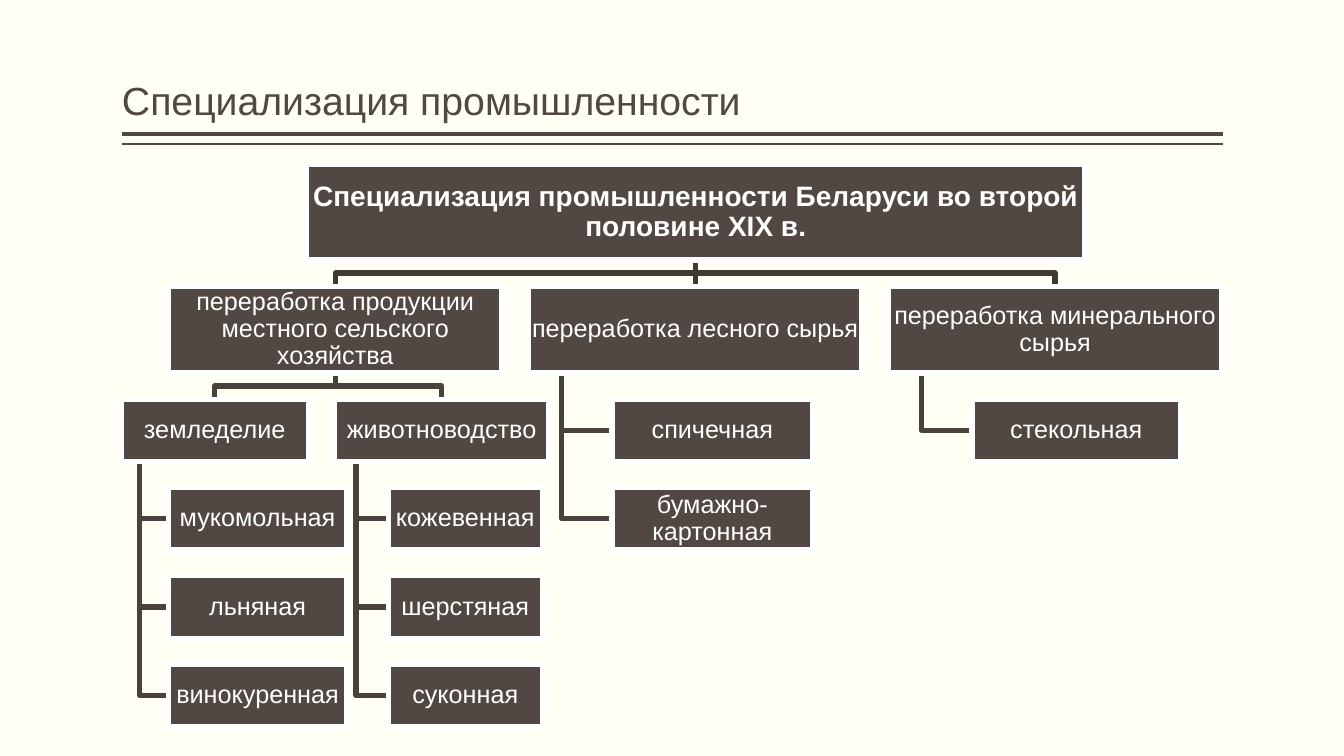
from pptx import Presentation
from pptx.dml.color import RGBColor as RGB
from pptx.enum.shapes import MSO_CONNECTOR as Link, MSO_SHAPE as Kind
from pptx.enum.text import MSO_ANCHOR as Anchor, PP_ALIGN as Align
from pptx.oxml import parse_xml
from pptx.oxml.ns import qn
from pptx.util import Inches, Pt

# Content: a node is (text, column, row, children)
TITLE = "Специализация промышленности"
FARM = ("переработка продукции местного сельского хозяйства", "farm", 1, [
    ("земледелие", "crops", 2, [
        ("мукомольная", "crop goods", 3, []),
        ("льняная", "crop goods", 4, []),
        ("винокуренная", "crop goods", 5, []),
    ]),
    ("животноводство", "herds", 2, [
        ("кожевенная", "herd goods", 3, []),
        ("шерстяная", "herd goods", 4, []),
        ("суконная", "herd goods", 5, []),
    ]),
])
WOOD = ("переработка лесного сырья", "wood", 1, [
    ("спичечная", "wood goods", 2, []),
    ("бумажно-картонная", "wood goods", 3, []),
])
STONE = ("переработка минерального сырья", "stone", 1, [
    ("стекольная", "stone goods", 2, []),
])
ROOT = ("Специализация промышленности Беларуси во второй половине XIX в.",
        "root", 0, [FARM, WOOD, STONE])

# Theme
THEME = dict(
    font="Arial", back="FFFFF3", dark="514843", light="FFFFFF",
    trunk="403934", twig="49413C", edge=3.78,
    title=28, root=20, node=18, lead=0.9,
)

# Grid in inches: columns are (left, width), rows are (top, height)
WIDE, HIGH = 13.33, 7.5
LEFT, SPAN = 1.21, 10.92
BRANCH, STEP = 3.31, 3.57
COLS = {
    "root": (3.04, 7.72),
    **{name: (1.67 + STEP * i, BRANCH)
       for i, name in enumerate(("farm", "wood", "stone"))},
    "crops": (1.2, 1.86), "crop goods": (1.67, 1.77),
    "herds": (3.32, 2.12), "herd goods": (3.85, 1.53),
    "wood goods": (6.07, 1.99), "stone goods": (9.64, 2.07),
}
ROWS = [(1.63, 0.95), (2.84, 0.86)]
ROWS += [(3.96 + 0.876 * i, 0.62) for i in range(4)]
RULES = [(1.33, 3), (1.43, 1)]
HANG = 0.1  # share of a parent's width where its side line drops

SHADE = (
    '<a:effectLst xmlns:a="http://schemas.openxmlformats.org/drawingml/2006/main">'
    '<a:outerShdw blurRad="38100" dist="38100" dir="2700000" algn="tl">'
    '<a:srgbClr val="000000"><a:alpha val="43000"/></a:srgbClr>'
    '</a:outerShdw></a:effectLst>')


def color(name):
    return RGB.from_string(THEME[name])


def write(frame, text, size, tint, align, anchor, pads, bold=False):
    frame.text = text
    frame.word_wrap = True
    frame.vertical_anchor = anchor
    frame.margin_left = frame.margin_right = Inches(pads[0])
    frame.margin_top = frame.margin_bottom = Inches(pads[1])
    para = frame.paragraphs[0]
    para.alignment, para.line_spacing = align, THEME["lead"]
    run = para.runs[0]
    font = run.font
    font.name, font.size, font.bold = THEME["font"], Pt(THEME[size]), bold
    font.color.rgb = color(tint)
    fill = font._element.find(qn("a:solidFill"))
    fill.addnext(parse_xml(SHADE))


def stroke(line, tint, width):
    line.color.rgb = color(tint)
    line.width = Pt(width)


def rule(slide, start, end, tint, width):
    line = slide.shapes.add_connector(
        Link.STRAIGHT, *(Inches(v) for v in (*start, *end)))
    stroke(line.line, tint, width)
    line._element.spPr.append(line._element.makeelement(qn("a:effectLst"), {}))


def bent(slide, points, tint):
    spots = [(Inches(x), Inches(y)) for x, y in points]
    pen = slide.shapes.build_freeform(*spots[0])
    pen.add_line_segments(spots[1:], close=False)
    shape = pen.convert_to_shape()
    shape.shadow.inherit = False
    shape.fill.background()
    stroke(shape.line, tint, THEME["edge"])


def place(node):
    return (*COLS[node[1]], *ROWS[node[2]])


def join(slide, node):
    """Fork down to children that branch again, else hang them at the side."""
    left, width, top, height = place(node)
    base, mid = top + height, left + width / 2
    tint = "twig" if node[2] else "trunk"
    fork = any(kid[3] for kid in node[3])
    for kid in node[3]:
        x, w, y, h = place(kid)
        goal, half = x + w / 2, (base + y) / 2
        if not fork:
            drop, turn = left + width * HANG, y + h / 2
            bent(slide, [(drop, base), (drop, turn), (x, turn)], tint)
        elif abs(goal - mid) < 0.02:
            rule(slide, (mid, base), (mid, y), tint, THEME["edge"])
        else:
            bent(slide, [(mid, base), (mid, half), (goal, half), (goal, y)], tint)
        join(slide, kid)


def draw(slide, node):
    left, width, top, height = place(node)
    box = slide.shapes.add_shape(
        Kind.RECTANGLE, *(Inches(v) for v in (left, top, width, height)))
    box.shadow.inherit = False
    box.fill.solid()
    box.fill.fore_color.rgb = color("dark")
    stroke(box.line, "light", THEME["edge"])
    main = node[2] == 0
    write(box.text_frame, node[0], "root" if main else "node", "light",
          Align.CENTER, Anchor.MIDDLE, (0.01, 0.01), main)
    for kid in node[3]:
        draw(slide, kid)


def main():
    deck = Presentation()
    deck.slide_width, deck.slide_height = Inches(WIDE), Inches(HIGH)
    slide = deck.slides.add_slide(deck.slide_layouts[6])
    slide.background.fill.solid()
    slide.background.fill.fore_color.rgb = color("back")

    # Heading with its double rule
    for y, width in RULES:
        rule(slide, (LEFT + SPAN, y), (LEFT, y), "dark", width)
    head = slide.shapes.add_textbox(
        Inches(LEFT), Inches(0.08), Inches(SPAN), Inches(1.2))
    write(head.text_frame, TITLE, "title", "dark",
          Align.LEFT, Anchor.BOTTOM, (0, 0.05))

    # Tree: lines first, boxes over them
    join(slide, ROOT)
    draw(slide, ROOT)
    deck.save("out.pptx")


if __name__ == "__main__":
    main()
